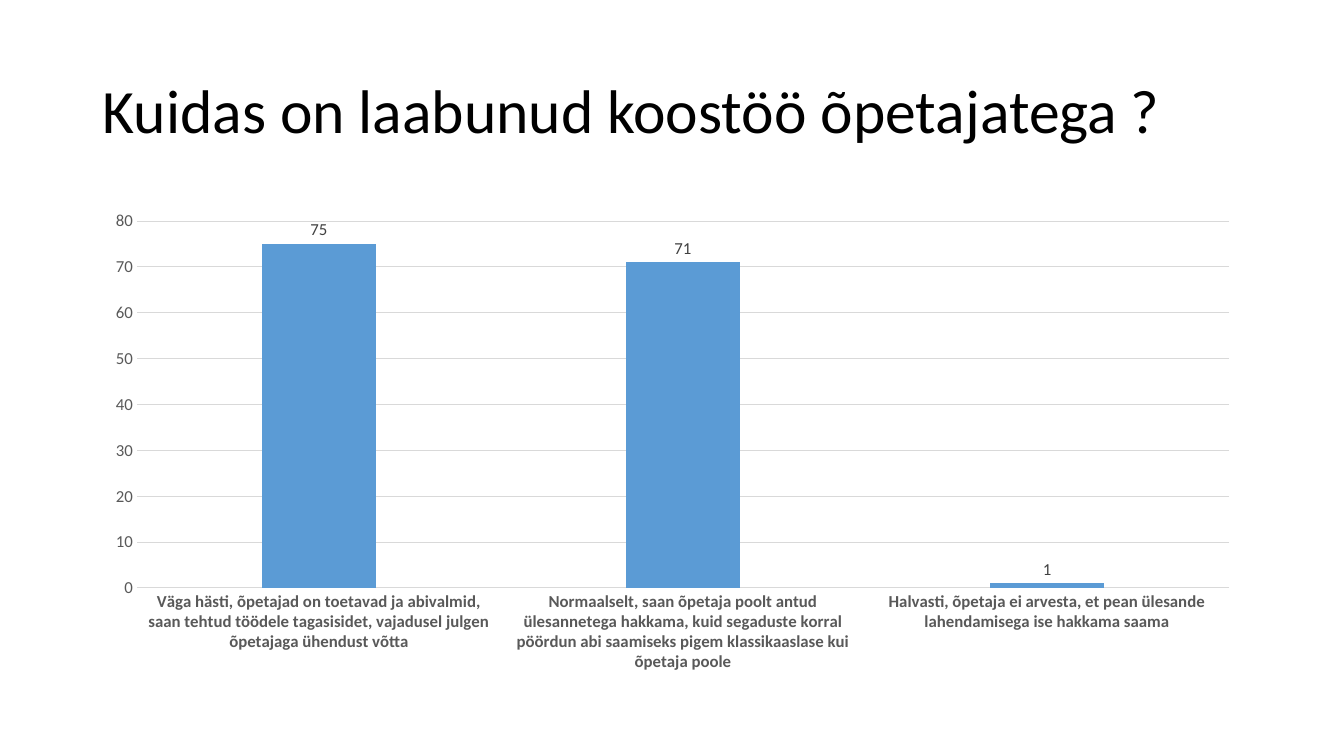
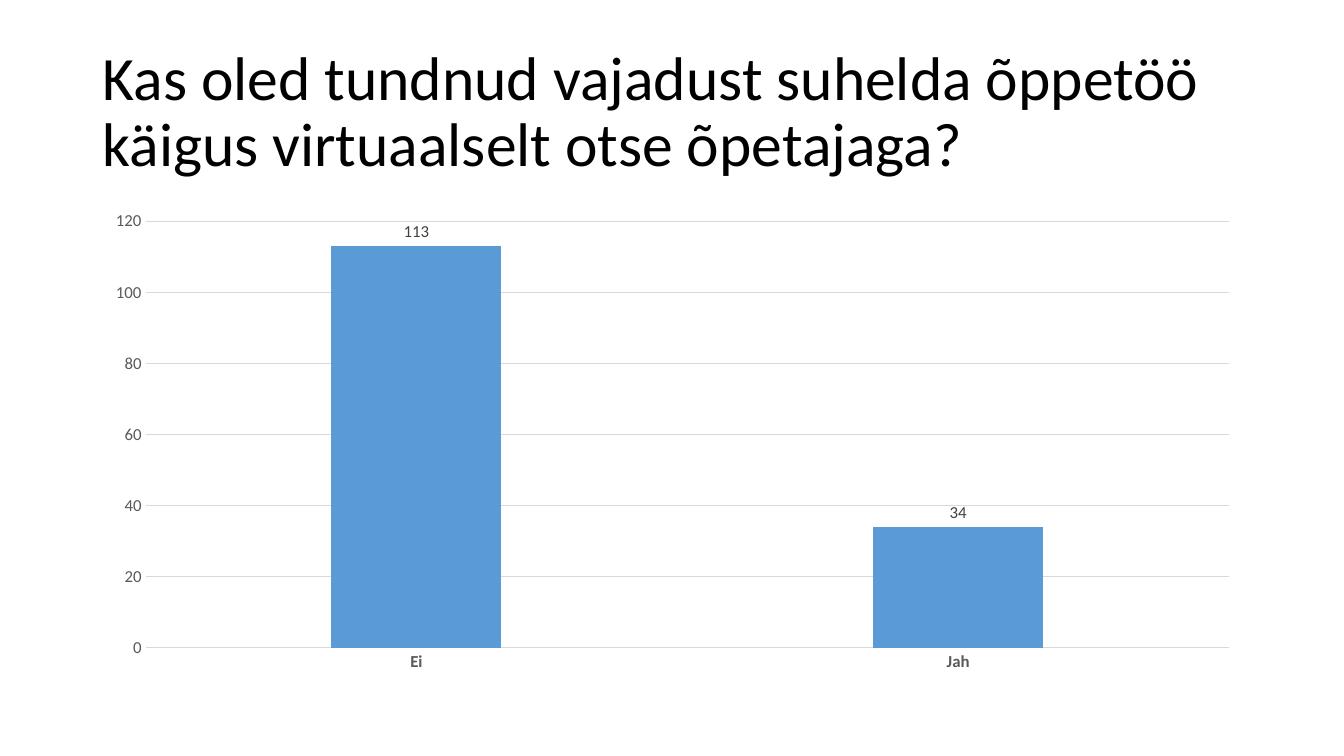
from pptx import Presentation
from pptx import util as u
from pptx.chart.data import CategoryChartData
from pptx.dml.color import RGBColor
from pptx.enum import chart as ch, text

FONT = "Calibri"
COLOURS = {
    "title": "000000",
    "bar": "5B9BD5",
    "axis": "595959",
    "label": "404040",
    "line": "D9D9D9",
}

# Regions shared by the slides: left, top, width, height
TITLE_BOX = [u.Inches(n) for n in (0.92, 0.4, 11.5, 1.45)]
CHART_BOX = [u.Inches(n) for n in (0.92, 2, 11.5, 4.76)]

# Question, answers with counts, axis maximum, axis step
QUESTIONS = [
    (
        "Kuidas on laabunud koostöö õpetajatega ?",
        {
            "Väga hästi, õpetajad on toetavad ja abivalmid, saan tehtud töödele "
            "tagasisidet, vajadusel julgen õpetajaga ühendust võtta": 75,
            "Normaalselt, saan õpetaja poolt antud ülesannetega hakkama, kuid "
            "segaduste korral pöördun abi saamiseks pigem klassikaaslase kui "
            "õpetaja poole": 71,
            "Halvasti, õpetaja ei arvesta, et pean ülesande lahendamisega ise "
            "hakkama saama": 1,
        },
        80,
        10,
    ),
    (
        "Kas oled tundnud vajadust suhelda õppetöö käigus virtuaalselt "
        "otse õpetajaga?",
        {"Ei": 113, "Jah": 34},
        120,
        20,
    ),
]


def rgb(role):
    return RGBColor.from_string(COLOURS[role])


def style_font(font, size, role, bold=False):
    font.name = FONT
    font.size = u.Pt(size)
    font.bold = bold
    font.color.rgb = rgb(role)


def style_line(line):
    line.color.rgb = rgb("line")
    line.width = u.Pt(0.75)


def add_title(slide, box, question):
    frame = slide.shapes.add_textbox(*box).text_frame
    frame.word_wrap = True
    frame.vertical_anchor = text.MSO_ANCHOR.MIDDLE
    paragraph = frame.paragraphs[0]
    paragraph.line_spacing = 0.9
    run = paragraph.add_run()
    run.text = question
    style_font(run.font, 44, "title")


def add_answer_chart(slide, box, answers, maximum, step):
    data = CategoryChartData()
    data.categories = list(answers)
    data.add_series("Series 1", list(answers.values()))
    chart = slide.shapes.add_chart(
        ch.XL_CHART_TYPE.COLUMN_CLUSTERED, *box, data
    ).chart
    chart.has_title = False
    chart.has_legend = False
    style_font(chart.font, 10, "title")

    # Bars and their counts
    plot = chart.plots[0]
    plot.vary_by_categories = False
    plot.gap_width = 219
    plot.overlap = -27
    bars = plot.series[0]
    bars.format.fill.solid()
    bars.format.fill.fore_color.rgb = rgb("bar")
    counts = bars.data_labels
    counts.show_value = True
    counts.position = ch.XL_LABEL_POSITION.OUTSIDE_END
    style_font(counts.font, 12, "label")

    # Axes
    answer_axis, count_axis = chart.category_axis, chart.value_axis
    for axis in (answer_axis, count_axis):
        axis.major_tick_mark = ch.XL_TICK_MARK.NONE
        axis.minor_tick_mark = ch.XL_TICK_MARK.NONE
        style_font(axis.tick_labels.font, 12, "axis", bold=axis is answer_axis)
    style_line(answer_axis.format.line)
    count_axis.format.line.fill.background()
    count_axis.minimum_scale = 0
    count_axis.maximum_scale = maximum
    count_axis.major_unit = step
    count_axis.has_major_gridlines = True
    style_line(count_axis.major_gridlines.format.line)


def add_question_slide(deck, question, answers, maximum, step):
    slide = deck.slides.add_slide(deck.slide_layouts[6])
    add_title(slide, TITLE_BOX, question)
    add_answer_chart(slide, CHART_BOX, answers, maximum, step)


def main():
    deck = Presentation()
    deck.slide_width = u.Inches(13.33)
    deck.slide_height = u.Inches(7.5)
    for question in QUESTIONS:
        add_question_slide(deck, *question)
    deck.save("out.pptx")


if __name__ == "__main__":
    main()
